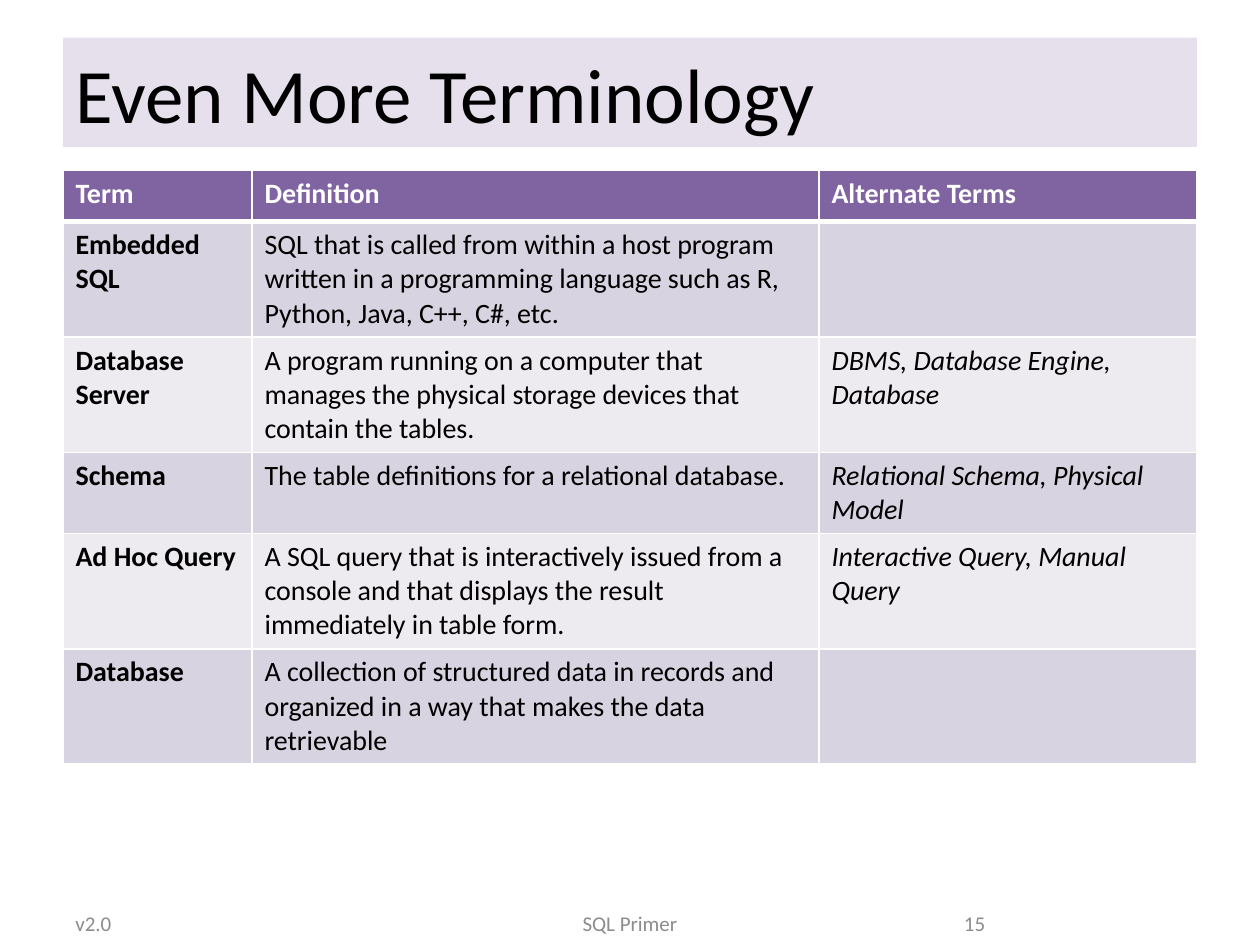
from lxml import etree
from pptx import Presentation
from pptx.dml.color import RGBColor
from pptx.enum.text import MSO_ANCHOR, PP_ALIGN
from pptx.oxml.ns import qn
from pptx.util import Cm, Pt

LEFT, CENTER, RIGHT = PP_ALIGN.LEFT, PP_ALIGN.CENTER, PP_ALIGN.RIGHT
MIDDLE = MSO_ANCHOR.MIDDLE
TITLE_ONLY = 5

COLORS = {
    "title_band": "E6E0EC",
    "header": "8064A2",
    "odd_row": "D8D3E0",
    "even_row": "EDEAF0",
    "text": "000000",
    "white": "FFFFFF",
    "footer": "8C8C8C",
}

HEADINGS = ["Term", "Definition", "Alternate Terms"]
TERMS = [
    ("Embedded SQL",
     "SQL that is called from within a host program written in a "
     "programming language such as R, Python, Java, C++, C#, etc.", ""),
    ("Database Server",
     "A program running on a computer that manages the physical storage "
     "devices that contain the tables.", "DBMS, Database Engine, Database"),
    ("Schema", "The table definitions for a relational database.",
     "Relational Schema, Physical Model"),
    ("Ad Hoc Query",
     "A SQL query that is interactively issued from a console and that "
     "displays the result immediately in table form.",
     "Interactive Query, Manual Query"),
    ("Database",
     "A collection of structured data in records and organized in a way "
     "that makes the data retrievable", ""),
]
COLUMN_SHARES = [1 / 6, 1 / 2, 1 / 3]
COLUMN_STYLES = [{"bold": True}, {"bold": False}, {"bold": False, "italic": True}]
ROW_HEIGHTS = [1.04, 2.29, 2.29, 1.61, 2.29, 2.29]


def rgb(name):
    return RGBColor.from_string(COLORS[name])


def write(frame, text, size, color, align=LEFT, **style):
    paragraph = frame.paragraphs[0]
    paragraph.text = text
    paragraph.alignment = align
    font = paragraph.font if not text else paragraph.runs[0].font
    font.color.rgb = rgb(color)
    for attribute, value in {"name": "Calibri", "size": Pt(size), **style}.items():
        setattr(font, attribute, value)


def add_borders(cell, header):
    properties = cell._tc.get_or_add_tcPr()
    for side in "LRTB":
        width = 3 if header and side == "B" else 1
        line = etree.SubElement(properties, qn(f"a:ln{side}"), w=str(Pt(width)))
        fill = etree.SubElement(line, qn("a:solidFill"))
        etree.SubElement(fill, qn("a:srgbClr"), val=COLORS["white"])


def fill_title(slide, left, top, width, height):
    title = slide.shapes.title
    title.left, title.top, title.width, title.height = left, top, width, height
    title.fill.solid()
    title.fill.fore_color.rgb = rgb("title_band")
    title.text_frame.vertical_anchor = MIDDLE
    write(title.text_frame, "Even More Terminology", 44, "text")


def add_terms(slide, left, top, width):
    rows = [HEADINGS, *TERMS]
    table = slide.shapes.add_table(len(rows), len(HEADINGS), left, top, width,
                                   Cm(sum(ROW_HEIGHTS))).table
    for column, share in zip(table.columns, COLUMN_SHARES):
        column.width = round(width * share)
    for r, texts in enumerate(rows):
        header = r == 0
        table.rows[r].height = Cm(ROW_HEIGHTS[r])
        band = "header" if header else "odd_row" if r % 2 else "even_row"
        for c, text in enumerate(texts):
            cell = table.cell(r, c)
            style = {"bold": True} if header else COLUMN_STYLES[c]
            write(cell.text_frame, text, 16, "white" if header else "text", **style)
            add_borders(cell, header)
            cell.fill.solid()
            cell.fill.fore_color.rgb = rgb(band)


def add_footer(slide, left, top, height):
    # Offset from the left margin, width, text, alignment
    parts = [
        (0, 5.93, "v2.0", LEFT),
        (7.41, 8.04, "SQL Primer", CENTER),
        (16.93, 1.91, "15", RIGHT),
    ]
    for offset, width, text, align in parts:
        frame = slide.shapes.add_textbox(left + Cm(offset), top, Cm(width),
                                         height).text_frame
        frame.word_wrap = True
        frame.vertical_anchor = MIDDLE
        write(frame, text, 12, "footer", align)


def main():
    deck = Presentation()
    deck.slide_width, deck.slide_height = Cm(25.4), Cm(19.05)
    slide = deck.slides.add_slide(deck.slide_layouts[TITLE_ONLY])
    margin = Cm(1.27)
    content_width = deck.slide_width - 2 * margin

    fill_title(slide, margin, Cm(0.76), content_width, Cm(2.2))
    add_terms(slide, margin, Cm(3.43), content_width)
    add_footer(slide, margin, Cm(18.21), Cm(0.79))
    deck.save("out.pptx")


if __name__ == "__main__":
    main()
